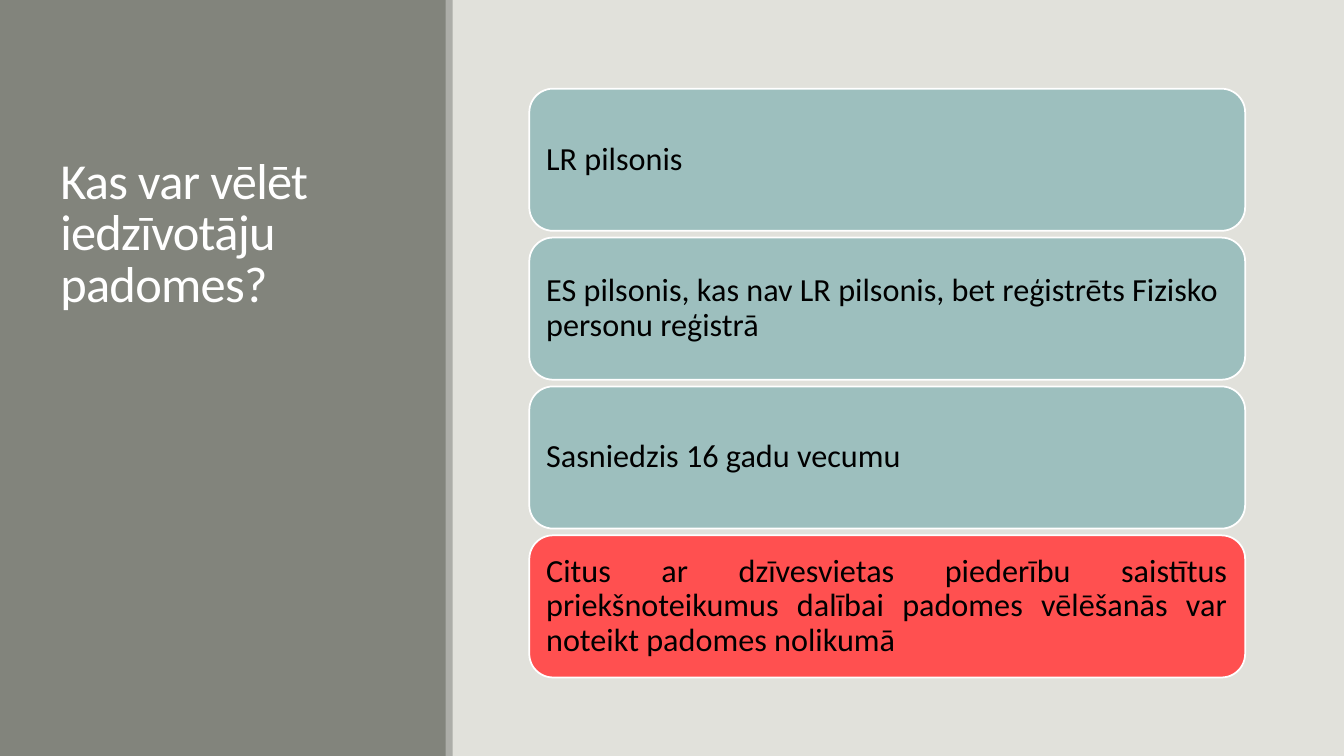
from pptx import Presentation
from pptx.dml.color import RGBColor
from pptx.enum.shapes import MSO_SHAPE
from pptx.enum.text import MSO_ANCHOR, PP_ALIGN
from pptx.util import Inches, Pt


def paint(fill, color):
    fill.solid()
    fill.fore_color.rgb = RGBColor.from_string(color)


def write(frame, text, size, color, spacing, align):
    frame.word_wrap = True
    para = frame.paragraphs[0]
    para.alignment = align
    para.line_spacing = spacing
    run = para.add_run()
    run.text = text
    run.font.name = "Calibri"
    run.font.size = Pt(size)
    paint(run.font.fill, color)
    return run


deck = Presentation()
deck.slide_width = Inches(13.33)
deck.slide_height = Inches(7.5)
slide = deck.slides.add_slide(deck.slide_layouts[6])
paint(slide.background.fill, "E1E1DB")

for left, width, color in [(0, 4.43, "82847C"), (4.42, 0.07, "ACADA8")]:
    panel = slide.shapes.add_shape(
        MSO_SHAPE.RECTANGLE, Inches(left), 0, Inches(width), Inches(7.5))
    panel.shadow.inherit = False
    paint(panel.fill, color)
    panel.line.fill.background()

title = slide.shapes.add_textbox(
    Inches(0.5), Inches(0.65), Inches(3.5), Inches(2.5))
title.text_frame.vertical_anchor = MSO_ANCHOR.BOTTOM
run = write(title.text_frame, "Kas var vēlēt iedzīvotāju padomes?",
            36, "FFFFFF", 0.85, PP_ALIGN.LEFT)
run.font._element.set("spc", "-50")

rules = [
    ("LR pilsonis", "9DBFBE", PP_ALIGN.LEFT),
    ("ES pilsonis, kas nav LR pilsonis, bet reģistrēts Fizisko personu reģistrā",
     "9DBFBE", PP_ALIGN.LEFT),
    ("Sasniedzis 16 gadu vecumu", "9DBFBE", PP_ALIGN.LEFT),
    ("Citus ar dzīvesvietas piederību saistītus priekšnoteikumus dalībai "
     "padomes vēlēšanās var noteikt padomes nolikumā",
     "FF5050", PP_ALIGN.JUSTIFY),
]
for row, (text, color, align) in enumerate(rules):
    card = slide.shapes.add_shape(
        MSO_SHAPE.ROUNDED_RECTANGLE, Inches(5.25), Inches(0.88 + row * 1.477),
        Inches(7.1), Inches(1.41))
    card.shadow.inherit = False
    paint(card.fill, color)
    paint(card.line.fill, "FFFFFF")
    card.line.width = Pt(1.25)
    frame = card.text_frame
    frame.vertical_anchor = MSO_ANCHOR.MIDDLE
    frame.margin_left = frame.margin_right = Inches(0.1)
    frame.margin_top = frame.margin_bottom = Inches(0.1)
    write(frame, text, 23, "000000", 0.9, align)

deck.save("out.pptx")
